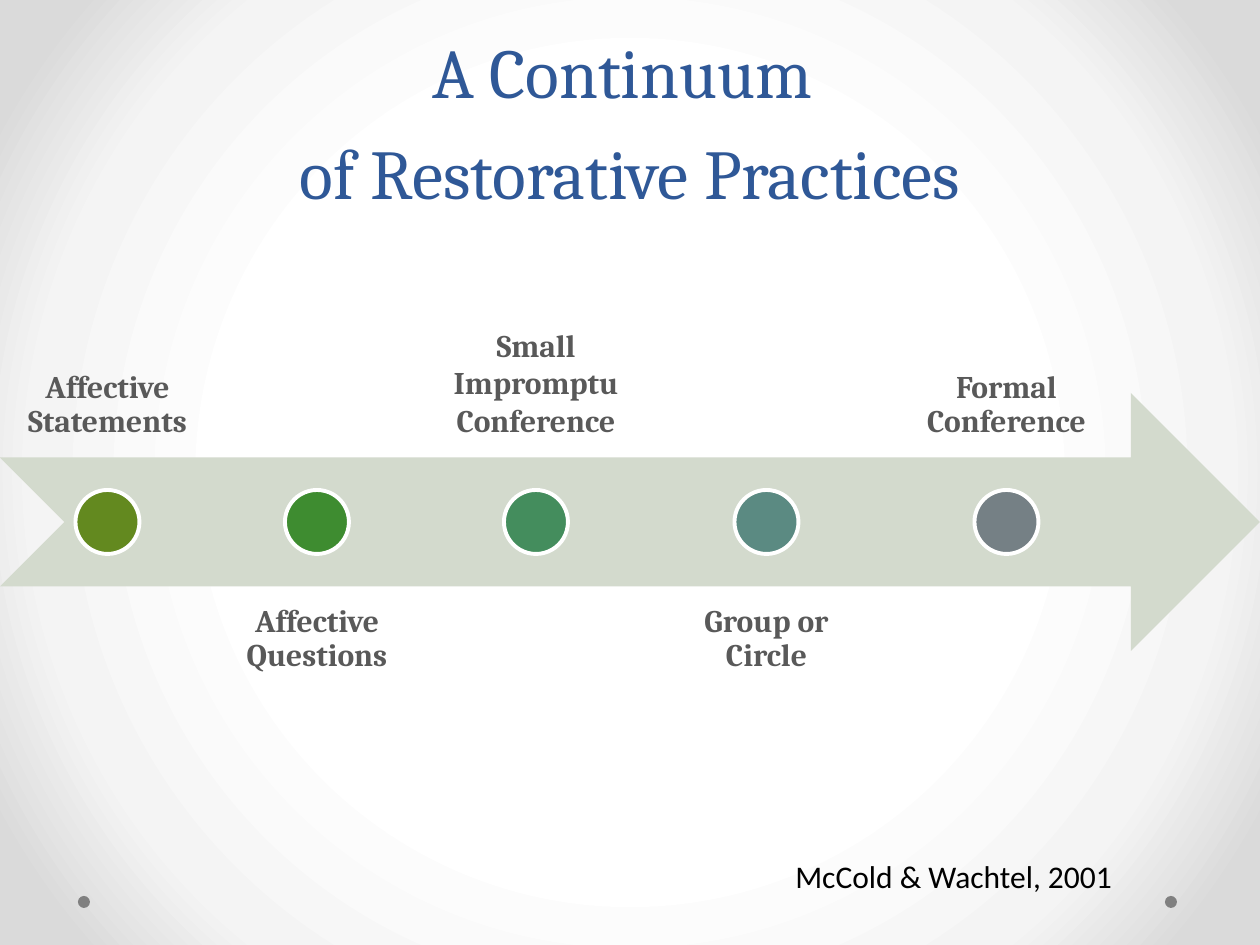
from pptx import Presentation
from pptx.dml.color import RGBColor
from pptx.enum.shapes import MSO_SHAPE as Preset
from pptx.enum.text import MSO_ANCHOR as Anchor, PP_ALIGN as Align
from pptx.oxml import parse_xml
from pptx.oxml.ns import nsdecls
from pptx.util import Emu, Pt

WHITE = RGBColor(0xFF, 0xFF, 0xFF)
BLACK = RGBColor(0x00, 0x00, 0x00)
TITLE_BLUE = RGBColor(0x2F, 0x58, 0x97)
LABEL_GRAY = RGBColor(0x59, 0x59, 0x59)
DOT_GRAY = RGBColor(0x80, 0x80, 0x80)
ARROW_GREEN = RGBColor(0xD3, 0xDA, 0xCD)
BACKDROP_STOPS = [(50, "FFFFFF"), (76, "F4F4F4"), (92, "DADADA")]
STEPS = [
    ("Affective Statements", 215, 0.9, RGBColor(0x63, 0x89, 0x1F)),
    ("Affective Questions", 186, 0.9, RGBColor(0x3E, 0x8C, 0x30)),
    ("Small Impromptu Conference", 234, 1.0, RGBColor(0x44, 0x8D, 0x5D)),
    ("Group or Circle", 209, 0.9, RGBColor(0x5B, 0x8A, 0x82)),
    ("Formal Conference", 253, 0.9, RGBColor(0x75, 0x80, 0x85)),
]
STEP_GAP = 9
STEP_DOT = 64


def px(length):
    """Turn pixels into EMU."""
    return Emu(round(length * 914400 / 126))


def add_preset(slide, preset, box, fill, outline=None):
    """Add a filled preset shape, with an outline if a colour is given."""
    shape = slide.shapes.add_shape(preset, *map(px, box))
    shape.shadow.inherit = False
    shape.fill.solid()
    shape.fill.fore_color.rgb = fill
    if outline is None:
        shape.line.fill.background()
    else:
        shape.line.color.rgb = outline
        shape.line.width = Pt(2.25)


def add_text(slide, box, text, size, font, color, bold=False, align=Align.CENTER,
             anchor=Anchor.TOP, spacing=1.0, inset=None):
    """Add a wrapped text box holding one formatted paragraph."""
    frame = slide.shapes.add_textbox(*map(px, box)).text_frame
    frame.word_wrap = True
    frame.vertical_anchor = anchor
    if inset is not None:
        frame.margin_left = frame.margin_right = px(inset)
        frame.margin_top = frame.margin_bottom = px(inset)
    paragraph = frame.paragraphs[0]
    paragraph.text = text
    paragraph.alignment = align
    paragraph.line_spacing = spacing
    for run in paragraph.runs:
        run.font.size = Pt(size)
        run.font.name = font
        run.font.bold = bold
        run.font.color.rgb = color


def add_backdrop(slide, box):
    """Paint the circular gradient background and its two corner dots."""
    left, top, width, height = box
    stops = "".join(
        f'<a:gs pos="{position * 1000}"><a:srgbClr val="{color}"/></a:gs>'
        for position, color in BACKDROP_STOPS
    )
    gradient = parse_xml(
        f'<a:gradFill {nsdecls("a")} rotWithShape="1"><a:gsLst>{stops}</a:gsLst>'
        '<a:path path="circle"><a:fillToRect l="50000" t="50000" r="50000" b="50000"/>'
        "</a:path></a:gradFill>"
    )
    slide.background.fill.solid()
    solid = slide.background._cSld.bg.bgPr[0]
    solid.getparent().replace(solid, gradient)
    for dot_left in (78, 1165):
        add_preset(slide, Preset.OVAL, (left + dot_left, top + height - 49, 12, 12), DOT_GRAY)


def add_title(slide, box):
    """Add the two-line title."""
    add_text(slide, box, "A Continuum \vof Restorative Practices", 40, "Cambria",
             TITLE_BLUE, anchor=Anchor.BOTTOM, spacing=Pt(58))


def add_continuum(slide, box):
    """Add the arrow with its steps labelled alternately above and below."""
    left, top, width, height = box
    band = height // 4
    add_preset(slide, Preset.NOTCHED_RIGHT_ARROW, box, ARROW_GREEN)
    step_left = left
    for index, (label, step_width, spacing, color) in enumerate(STEPS):
        above = index % 2 == 0
        label_top = top + band - height if above else top + height - band
        add_text(slide, (step_left, label_top, step_width, height), label, 18, "Cambria",
                 LABEL_GRAY, bold=True, anchor=Anchor.BOTTOM if above else Anchor.TOP,
                 spacing=spacing, inset=18)
        dot_left = step_left + (step_width - STEP_DOT) / 2
        dot_top = top + (height - STEP_DOT) / 2
        add_preset(slide, Preset.OVAL, (dot_left, dot_top, STEP_DOT, STEP_DOT), color, WHITE)
        step_left += step_width + STEP_GAP


def add_credit(slide, box):
    """Add the source of the continuum."""
    add_text(slide, box, "McCold & Wachtel, 2001", 18, "Calibri", BLACK, align=Align.LEFT)


def main():
    """Build and save the slide."""
    presentation = Presentation()
    presentation.slide_width, presentation.slide_height = px(1260), px(945)
    slide = presentation.slides.add_slide(presentation.slide_layouts[6])
    add_backdrop(slide, (0, 0, 1260, 945))
    add_title(slide, (63, 0, 1134, 220))
    add_continuum(slide, (0, 393, 1260, 258))
    add_credit(slide, (783, 851, 350, 50))
    presentation.save("out.pptx")


if __name__ == "__main__":
    main()
